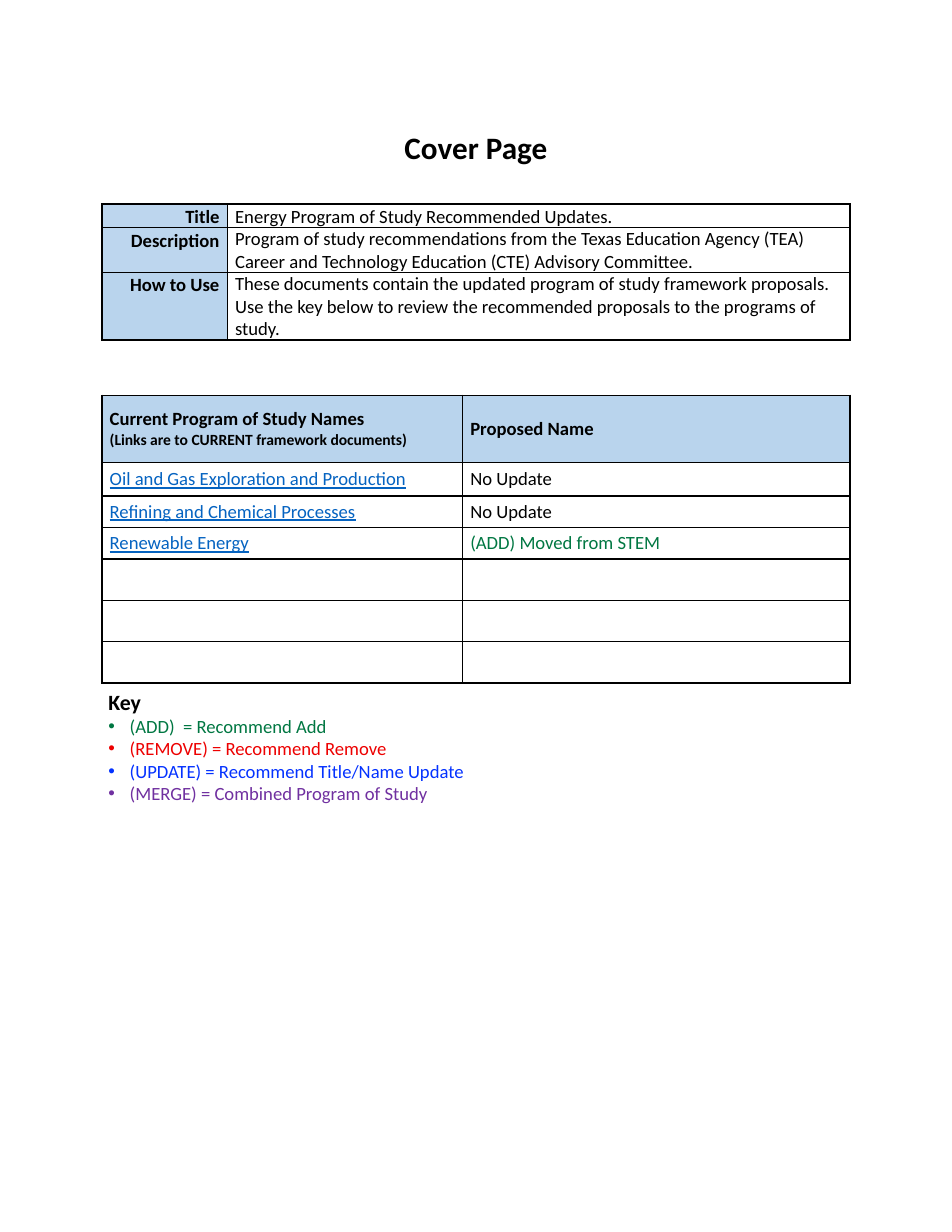
"""Build the cover page for the Energy program of study updates."""
from lxml.etree import SubElement
from pptx import Presentation
from pptx.dml.color import RGBColor
from pptx.enum.text import MSO_ANCHOR, PP_ALIGN
from pptx.oxml.ns import qn
from pptx.util import Inches, Pt

BLACK = RGBColor(0x00, 0x00, 0x00)
WHITE = RGBColor(0xFF, 0xFF, 0xFF)
PALE_BLUE = RGBColor(0xBD, 0xD6, 0xEE)
HEADER_BLUE = RGBColor(0xB9, 0xD4, 0xED)
LINK_BLUE = RGBColor(0x05, 0x63, 0xC1)
GREEN = RGBColor(0x00, 0x77, 0x42)
RED = RGBColor(0xED, 0x00, 0x00)
BLUE = RGBColor(0x04, 0x32, 0xFF)
PURPLE = RGBColor(0x70, 0x30, 0xA0)

WIDTH, HEIGHT = Inches(8.5), Inches(11)
TABLE_LEFT = Inches(0.91)
TABLE_WIDTH = Inches(6.68)
INDENT = Inches(0.19)


def add_text(paragraph, text, size=12, color=BLACK, bold=False, underline=False):
    run = paragraph.add_run()
    run.text = text
    run.font.name = "Calibri"
    run.font.size = Pt(size)
    run.font.color.rgb = color
    run.font.bold = bold
    run.font.underline = underline


def add_grid(top, first_column, row_heights, anchor):
    frame = slide.shapes.add_table(len(row_heights), 2, TABLE_LEFT, top,
                                   TABLE_WIDTH, Inches(sum(row_heights)))
    grid = frame.table
    grid.first_row = grid.horz_banding = False
    grid.columns[0].width = first_column
    grid.columns[1].width = TABLE_WIDTH - first_column
    for row, height in zip(grid.rows, row_heights):
        row.height = Inches(height)
    for cell in grid.iter_cells():
        cell.margin_left = cell.margin_right = Inches(0.07)
        cell.margin_top = cell.margin_bottom = 0
        cell.vertical_anchor = anchor
        for side in ("a:lnL", "a:lnR", "a:lnT", "a:lnB"):
            border = SubElement(cell._tc.get_or_add_tcPr(), qn(side), w=str(Pt(1)))
            SubElement(SubElement(border, qn("a:solidFill")), qn("a:srgbClr"), val=str(BLACK))
        cell.fill.background()
    return grid


prs = Presentation()
prs.slide_width, prs.slide_height = WIDTH, HEIGHT
slide = prs.slides.add_slide(prs.slide_layouts[6])

heading = slide.shapes.add_textbox(0, Inches(1.06), WIDTH, Inches(0.5)).text_frame
heading.word_wrap = True
heading.vertical_anchor = MSO_ANCHOR.MIDDLE
heading.paragraphs[0].alignment = PP_ALIGN.CENTER
add_text(heading.paragraphs[0], "Cover Page", size=20, bold=True)

details = [
    ("Title", "Energy Program of Study Recommended Updates.", PALE_BLUE),
    ("Description", "Program of study recommendations from the Texas Education Agency (TEA) "
     "Career and Technology Education (CTE) Advisory Committee.", PALE_BLUE),
    ("How to Use", "These documents contain the updated program of study framework proposals. "
     "Use the key below to review the recommended proposals to the programs of study.",
     HEADER_BLUE),
]
overview = add_grid(Inches(1.82), Inches(1.12), [0.2, 0.4, 0.6], MSO_ANCHOR.TOP)
for row, (label, description, shade) in enumerate(details):
    label_cell, description_cell = overview.cell(row, 0), overview.cell(row, 1)
    label_cell.fill.solid()
    label_cell.fill.fore_color.rgb = shade
    label_line = label_cell.text_frame.paragraphs[0]
    label_line.alignment = PP_ALIGN.RIGHT
    label_line.line_spacing = 1.07
    add_text(label_line, label, bold=True)
    add_text(description_cell.text_frame.paragraphs[0], description)
overview.cell(0, 1).text_frame.paragraphs[0].line_spacing = 1.07

programs = [
    ("Oil and Gas Exploration and Production", "No Update", BLACK),
    ("Refining and Chemical Processes", "No Update", BLACK),
    ("Renewable Energy", "(ADD) Moved from STEM", GREEN),
]
names = add_grid(Inches(3.53), Inches(3.22), [0.6, 0.3, 0.28, 0.28] + [0.37] * 3,
                 MSO_ANCHOR.MIDDLE)
for row in range(len(names.rows)):
    names.cell(row, 0).fill.solid()
    names.cell(row, 0).fill.fore_color.rgb = WHITE if row else HEADER_BLUE
names.cell(0, 1).fill.solid()
names.cell(0, 1).fill.fore_color.rgb = HEADER_BLUE
current_header = names.cell(0, 0).text_frame
add_text(current_header.paragraphs[0], "Current Program of Study Names", bold=True)
add_text(current_header.add_paragraph(), "(Links are to CURRENT framework documents)",
         size=10, bold=True)
add_text(names.cell(0, 1).text_frame.paragraphs[0], "Proposed Name", bold=True)
for row, (current, proposed, color) in enumerate(programs, start=1):
    add_text(names.cell(row, 0).text_frame.paragraphs[0], current,
             color=LINK_BLUE, underline=True)
    add_text(names.cell(row, 1).text_frame.paragraphs[0], proposed, color=color)

key = slide.shapes.add_textbox(Inches(0.87), Inches(6.1), Inches(5.7), Inches(1.14)).text_frame
key.word_wrap = True
add_text(key.paragraphs[0], "Key", size=14, bold=True)
for meaning, color in [
    ("(ADD)  = Recommend Add", GREEN),
    ("(REMOVE) = Recommend Remove", RED),
    ("(UPDATE) = Recommend Title/Name Update", BLUE),
    ("(MERGE) = Combined Program of Study", PURPLE),
]:
    entry = key.add_paragraph()
    properties = entry._p.get_or_add_pPr()
    properties.set("marL", str(INDENT))
    properties.set("indent", str(-INDENT))
    SubElement(properties, qn("a:buFont"), typeface="Arial")
    SubElement(properties, qn("a:buChar"), char="•")
    add_text(entry, meaning, color=color)

prs.save("out.pptx")
